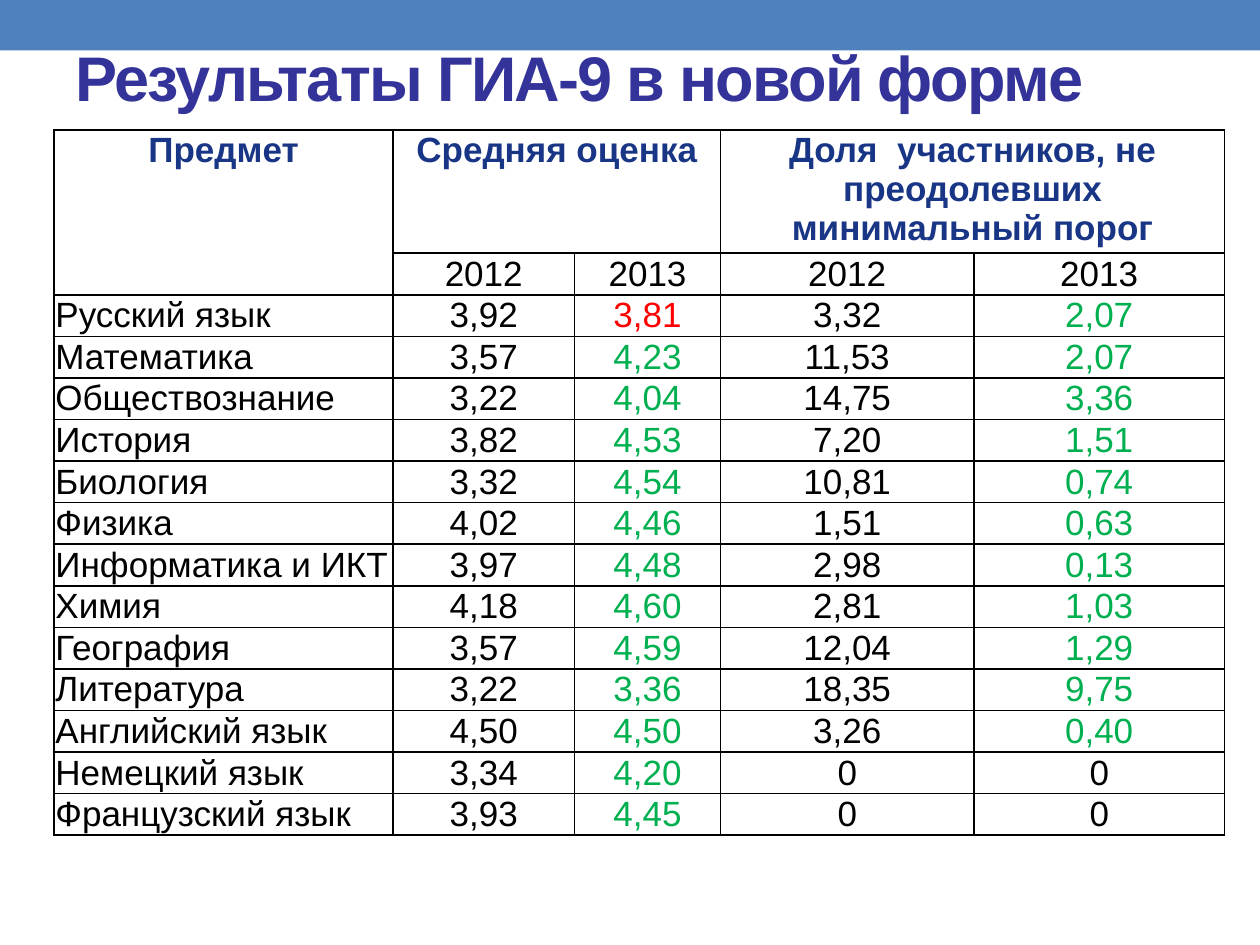
from lxml import etree
from pptx import Presentation
from pptx.dml.color import RGBColor
from pptx.enum.shapes import MSO_SHAPE as Shape
from pptx.enum.text import MSO_ANCHOR as Anchor, MSO_AUTO_SIZE as AutoSize, PP_ALIGN as Align
from pptx.oxml.ns import qn
from pptx.util import Inches, Pt

COLORS = {
    "band": "4F81BD",
    "title": "333399",
    "header": "183586",
    "text": "000000",
    "better": "00B050",
    "worse": "FF0000",
    "border": "000000",
}
COLUMN_WIDTHS = [2.69, 1.44, 1.16, 2.01, 1.99]
HEADER_HEIGHT, ROW_HEIGHT = 0.98, 0.33

# Subject, average grade 2012 and 2013, share below the threshold 2012 and 2013
RESULTS = [
    ("Русский язык", "3,92", "3,81", "3,32", "2,07"),
    ("Математика", "3,57", "4,23", "11,53", "2,07"),
    ("Обществознание", "3,22", "4,04", "14,75", "3,36"),
    ("История", "3,82", "4,53", "7,20", "1,51"),
    ("Биология", "3,32", "4,54", "10,81", "0,74"),
    ("Физика", "4,02", "4,46", "1,51", "0,63"),
    ("Информатика и ИКТ", "3,97", "4,48", "2,98", "0,13"),
    ("Химия", "4,18", "4,60", "2,81", "1,03"),
    ("География", "3,57", "4,59", "12,04", "1,29"),
    ("Литература", "3,22", "3,36", "18,35", "9,75"),
    ("Английский язык", "4,50", "4,50", "3,26", "0,40"),
    ("Немецкий язык", "3,34", "4,20", "0", "0"),
    ("Французский язык", "3,93", "4,45", "0", "0"),
]


def number(text):
    return float(text.replace(",", "."))


def row_colors(row):
    """Colour the 2013 values by how they compare with 2012."""
    grade_before, grade_after, share_before, share_after = map(number, row[1:])
    grade = "worse" if grade_after < grade_before else "better"
    share = "better" if share_after < share_before else "text"
    return ["text", "text", grade, "text", share]


class SlideBuilder:
    font_name = "Arial"

    def __init__(self, slide):
        self.slide = slide

    def format_text(self, text_frame, size, color, bold=False, align=Align.CENTER):
        for paragraph in text_frame.paragraphs:
            paragraph.alignment = align
            for run in paragraph.runs:
                run.font.name = self.font_name
                run.font.size = Pt(size)
                run.font.bold = bold
                run.font.color.rgb = RGBColor.from_string(COLORS[color])

    def band(self, left, top, width, height):
        shape = self.slide.shapes.add_shape(
            Shape.RECTANGLE, Inches(left), Inches(top), Inches(width), Inches(height))
        shape.shadow.inherit = False
        shape.fill.solid()
        shape.fill.fore_color.rgb = RGBColor.from_string(COLORS["band"])
        shape.line.fill.background()
        # Place the band behind the title
        shape.element.getparent().insert(2, shape.element)

    def title(self, text, left, top, width, height):
        shape = self.slide.shapes.title
        shape.left, shape.top = Inches(left), Inches(top)
        shape.width, shape.height = Inches(width), Inches(height)
        text_frame = shape.text_frame
        text_frame.text = text
        text_frame.auto_size = AutoSize.NONE
        text_frame.vertical_anchor = Anchor.MIDDLE
        self.format_text(text_frame, 36, "title", bold=True, align=Align.LEFT)
        for run in text_frame.paragraphs[0].runs:
            run.font._element.set("spc", "-100")

    def table(self, left, top, column_widths, row_heights):
        table = self.slide.shapes.add_table(
            len(row_heights), len(column_widths), Inches(left), Inches(top),
            Inches(sum(column_widths)), Inches(sum(row_heights))).table
        table.first_row = table.horz_banding = False
        for column, width in zip(table.columns, column_widths):
            column.width = Inches(width)
        for row, height in zip(table.rows, row_heights):
            row.height = Inches(height)
        for cell in table.iter_cells():
            cell.margin_left = cell.margin_right = cell.margin_top = Inches(0.01)
            cell.margin_bottom = 0
            self.borders(cell)
            cell.fill.background()
        return table

    def borders(self, cell):
        properties = cell._tc.get_or_add_tcPr()
        for side in ("a:lnL", "a:lnR", "a:lnT", "a:lnB"):
            line = etree.SubElement(properties, qn(side), w=str(Pt(1)))
            fill = etree.SubElement(line, qn("a:solidFill"))
            etree.SubElement(fill, qn("a:srgbClr"), val=COLORS["border"])

    def cell(self, cell, text, color="text", bold=False, align=Align.CENTER):
        cell.text_frame.text = text
        self.format_text(cell.text_frame, 20, color, bold, align)


def main():
    presentation = Presentation()
    presentation.slide_width, presentation.slide_height = Inches(10), Inches(7.5)
    builder = SlideBuilder(presentation.slides.add_slide(presentation.slide_layouts[5]))

    # Top band and title
    builder.band(0, 0, 10, 0.4)
    builder.title("Результаты ГИА-9 в новой форме", 0.5, 0.3, 9, 0.61)

    # Table grid with merged header cells
    row_heights = [HEADER_HEIGHT] + [ROW_HEIGHT] * (len(RESULTS) + 1)
    table = builder.table(0.43, 1.03, COLUMN_WIDTHS, row_heights)
    headers = [
        ("Предмет", 0, (1, 0)),
        ("Средняя оценка", 1, (0, 2)),
        ("Доля  участников, не преодолевших минимальный порог", 3, (0, 4)),
    ]
    for text, column, last_cell in headers:
        table.cell(0, column).merge(table.cell(*last_cell))
        builder.cell(table.cell(0, column), text, "header", bold=True)
    for column, year in enumerate(["2012", "2013"] * 2, start=1):
        builder.cell(table.cell(1, column), year)

    # Results by subject
    for row_index, row in enumerate(RESULTS, start=2):
        for column, (text, color) in enumerate(zip(row, row_colors(row))):
            align = Align.CENTER if column else Align.JUSTIFY
            builder.cell(table.cell(row_index, column), text, color, align=align)

    presentation.save("out.pptx")


if __name__ == "__main__":
    main()
